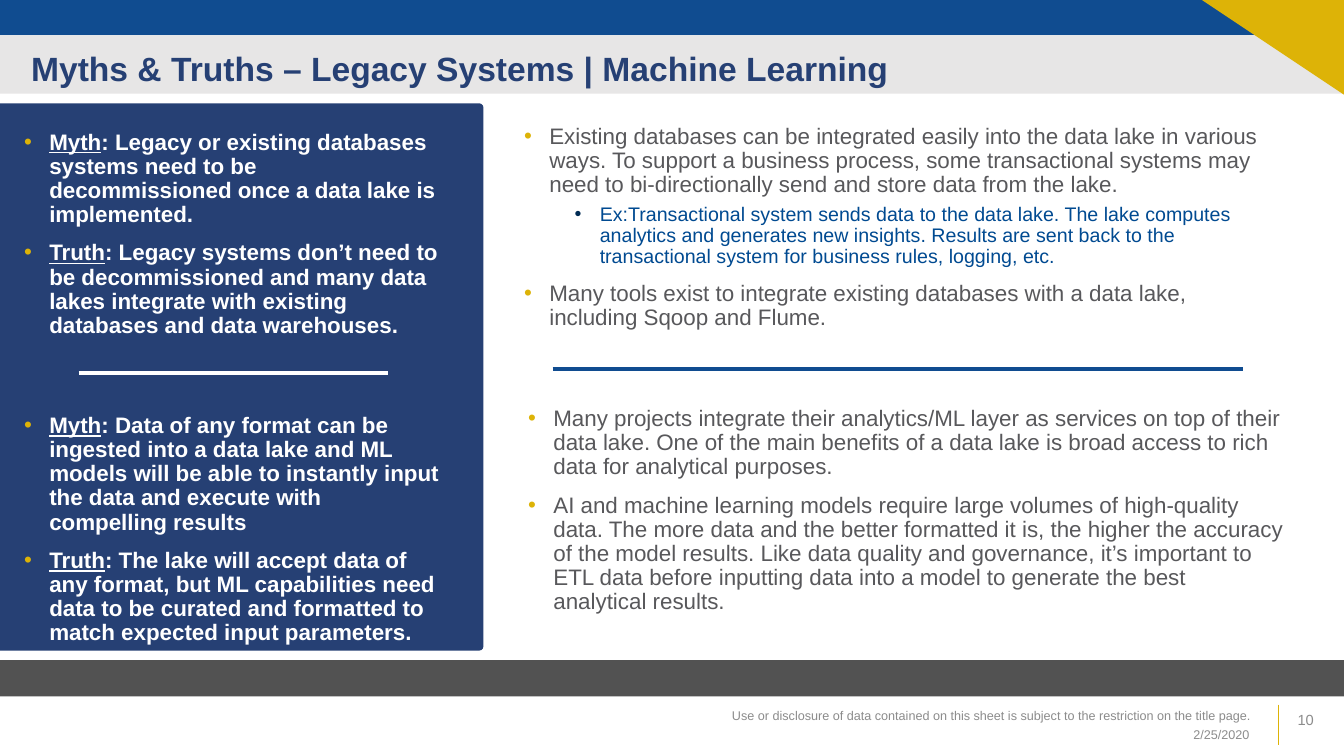
import pptx
import pptx.util
import pptx.dml.color
import pptx.enum.shapes
import pptx.enum.text
import pptx.oxml.ns
from lxml import etree

Inches = pptx.util.Inches
Pt = pptx.util.Pt
SHAPE = pptx.enum.shapes.MSO_SHAPE
ALIGN = pptx.enum.text.PP_ALIGN
ANCHOR = pptx.enum.text.MSO_ANCHOR
qn = pptx.oxml.ns.qn

BLUE, NAVY, GOLD = "104C90", "264074", "DDB307"
WHITE, TEXT_GRAY, FOOTER_GRAY = "FFFFFF", "58585B", "8C8C8C"


def rgb(color):
    return pptx.dml.color.RGBColor.from_string(color)


def add_span(para, text, size, color, bold=False, underline=False):
    span = para.add_run()
    span.text = text
    span.font.name = "Arial"
    span.font.size = Pt(size)
    span.font.color.rgb = rgb(color)
    span.font.bold = bold
    span.font.underline = underline


deck = pptx.Presentation()
deck.slide_width = Inches(13.33)
deck.slide_height = Inches(7.5)
page = deck.slides.add_slide(deck.slide_layouts[6])

# Panel and bands: preset, left, top, width, height, rotation, corners, fill
bands = [
    (SHAPE.ROUND_2_SAME_RECTANGLE, -0.32, 1.34, 5.43, 4.8, 90, [0.009, 0], NAVY),
    (SHAPE.RECTANGLE, 0, 0, 12.54, 0.35, 0, [], BLUE),
    (SHAPE.ROUND_1_RECTANGLE, 0, 0.35, 13.33, 0.58, 0, [0.025], "E7E6E6"),
    (SHAPE.RECTANGLE, 0, 6.55, 13.33, 0.36, 0, [], "525252"),
]
for preset, left, top, width, height, rotation, corners, color in bands:
    band = page.shapes.add_shape(
        preset, Inches(left), Inches(top), Inches(width), Inches(height))
    band.rotation = rotation
    for index, corner in enumerate(corners):
        band.adjustments[index] = corner
    band.shadow.inherit = False
    band.fill.solid()
    band.fill.fore_color.rgb = rgb(color)
    band.line.fill.background()

outline = page.shapes.build_freeform(Inches(11.92), Inches(0))
outline.add_line_segments(
    [(Inches(13.33), Inches(0)), (Inches(13.33), Inches(0.94))], close=True)
corner_triangle = outline.convert_to_shape()
corner_triangle.shadow.inherit = False
corner_triangle.fill.solid()
corner_triangle.fill.fore_color.rgb = rgb(GOLD)
corner_triangle.line.fill.background()

# Rules: start x, start y, end x, end y, colour, width
rules = [
    (12.68, 6.99, 12.68, 7.39, GOLD, 0.5),
    (0.78, 3.7, 3.85, 3.7, WHITE, 3),
    (5.48, 3.66, 12.33, 3.66, BLUE, 3),
]
for x1, y1, x2, y2, color, width in rules:
    rule = page.shapes.add_connector(
        pptx.enum.shapes.MSO_CONNECTOR.STRAIGHT,
        Inches(x1), Inches(y1), Inches(x2), Inches(y2))
    rule.line.color.rgb = rgb(color)
    rule.line.width = Pt(width)
    etree.SubElement(rule._element.spPr, qn("a:effectLst"))

# Single lines: left, top, width, text, size, colour, bold, alignment
labels = [
    (0.21, 0.5, 10.71, "Myths & Truths – Legacy Systems | Machine Learning",
     24, NAVY, True, ALIGN.LEFT),
    (6.06, 6.91, 6.44, "Use or disclosure of data contained on this sheet is "
     "subject to the restriction on the title page.",
     9, FOOTER_GRAY, False, ALIGN.RIGHT),
    (11.13, 7.1, 1.36, "2/25/2020", 9, FOOTER_GRAY, False, ALIGN.RIGHT),
    (12.43, 6.95, 0.7, "10", 10.5, FOOTER_GRAY, False, ALIGN.RIGHT),
]
for left, top, width, text, size, color, bold, alignment in labels:
    box = page.shapes.add_textbox(
        Inches(left), Inches(top), Inches(width), Inches(0.4))
    box.text_frame.word_wrap = True
    box.text_frame.vertical_anchor = ANCHOR.MIDDLE
    para = box.text_frame.paragraphs[0]
    para.alignment = alignment
    para.line_spacing = 0.9
    add_span(para, text, size, color, bold)

# Bulleted boxes: left, top, width, height, paragraphs of (level, lead word, text)
bullet_boxes = [
    (0.14, 1.25, 4.35, 2.3, [
        (0, "Myth", ": Legacy or existing databases systems need to be "
         "decommissioned once a data lake is implemented."),
        (0, "Truth", ": Legacy systems don’t need to be decommissioned and many "
         "data lakes integrate with existing databases and data warehouses."),
    ]),
    (0.14, 4.06, 4.35, 2.4, [
        (0, "Myth", ": Data of any format can be ingested into a data lake and ML "
         "models will be able to instantly input the data and execute with "
         "compelling results"),
        (0, "Truth", ": The lake will accept data of any format, but ML "
         "capabilities need data to be curated and formatted to match expected "
         "input parameters."),
    ]),
    (5.1, 1.19, 7.69, 2.32, [
        (0, "", "Existing databases can be integrated easily into the data lake "
         "in various ways. To support a business process, some transactional "
         "systems may need to bi-directionally send and store data from the lake."),
        (1, "", "Ex:Transactional system sends data to the data lake. The lake "
         "computes analytics and generates new insights. Results are sent back "
         "to the transactional system for business rules, logging, etc."),
        (0, "", "Many tools exist to integrate existing databases with a data "
         "lake, including Sqoop and Flume."),
    ]),
    (5.14, 3.99, 7.69, 2.41, [
        (0, "", "Many projects integrate their analytics/ML layer as services on "
         "top of their data lake. One of the main benefits of a data lake is "
         "broad access to rich data for analytical purposes."),
        (0, "", "AI and machine learning models require large volumes of "
         "high-quality data. The more data and the better formatted it is, the "
         "higher the accuracy of the model results. Like data quality and "
         "governance, it’s important to ETL data before inputting data into a "
         "model to generate the best analytical results."),
    ]),
]
# Per level: text indent, space before, size, text colour, bullet colour
levels = [(0.25, 10, 16, TEXT_GRAY, GOLD), (0.75, 5, 14, "004A91", "002B54")]

for left, top, width, height, items in bullet_boxes:
    box = page.shapes.add_textbox(
        Inches(left), Inches(top), Inches(width), Inches(height))
    frame = box.text_frame
    frame.word_wrap = True
    for index, (level, lead, text) in enumerate(items):
        indent, gap, size, color, bullet_color = levels[level]
        para = frame.add_paragraph() if index else frame.paragraphs[0]
        para.level = level
        properties = para._p.get_or_add_pPr()
        properties.set("marL", str(Inches(indent)))
        properties.set("indent", str(Inches(-0.25)))
        bullet_fill = etree.SubElement(properties, qn("a:buClr"))
        etree.SubElement(bullet_fill, qn("a:srgbClr"), val=bullet_color)
        etree.SubElement(properties, qn("a:buFont"), typeface="Arial")
        etree.SubElement(properties, qn("a:buChar"), char="•")
        para.line_spacing = 0.9
        para.space_before = Pt(gap if index else 0)
        if lead:
            add_span(para, lead, size, WHITE, bold=True, underline=True)
            add_span(para, text, size, WHITE, bold=True)
        else:
            add_span(para, text, size, color)

deck.save("out.pptx")
